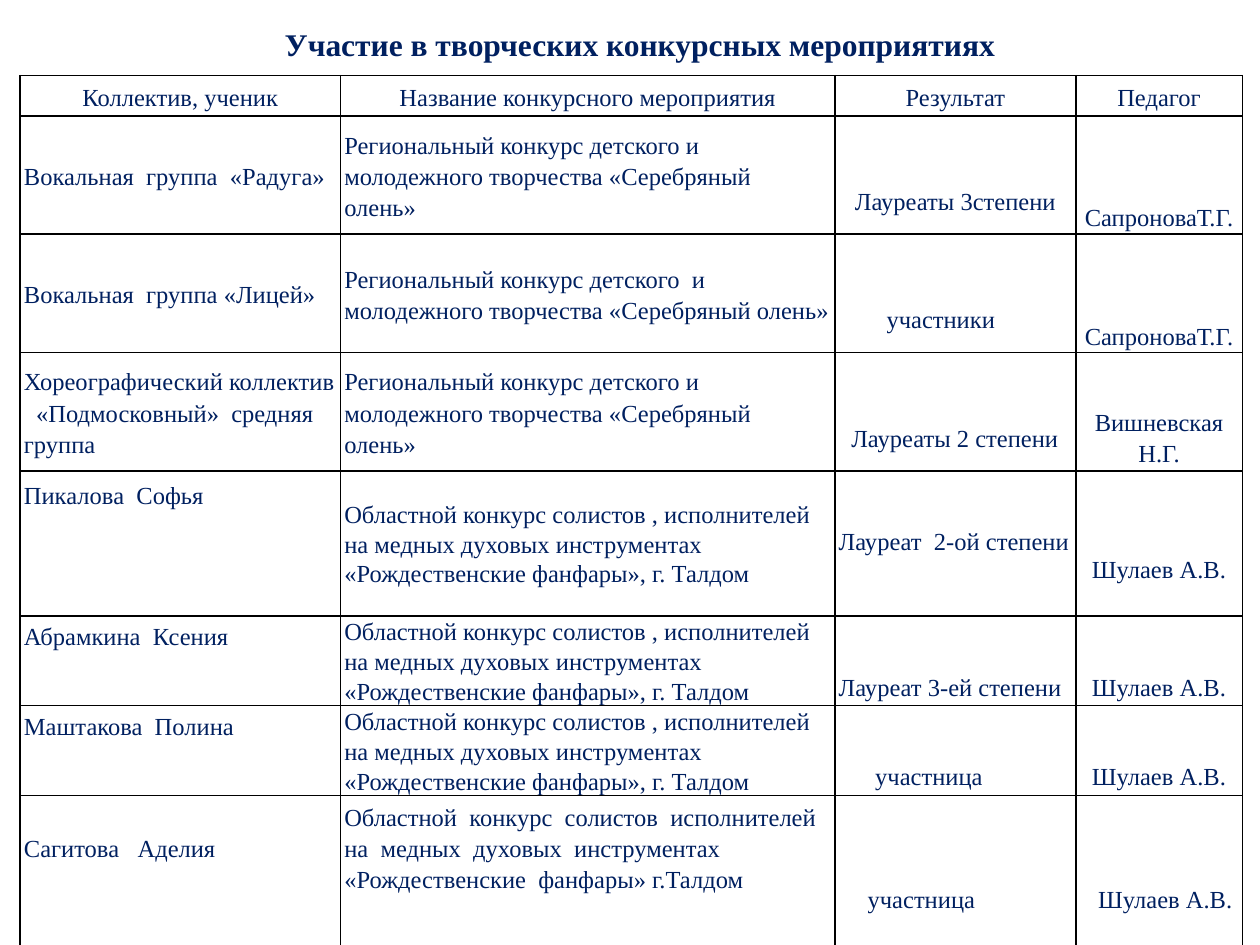
from dataclasses import dataclass

from lxml import etree
from pptx import Presentation
from pptx.dml.color import RGBColor
from pptx.enum.text import MSO_ANCHOR, MSO_AUTO_SIZE, PP_ALIGN
from pptx.oxml.ns import qn
from pptx.util import Inches, Pt

CENTER, LEFT = PP_ALIGN.CENTER, PP_ALIGN.LEFT
MIDDLE, TOP = MSO_ANCHOR.MIDDLE, MSO_ANCHOR.TOP
NO_AUTOFIT = MSO_AUTO_SIZE.NONE
TITLE_ONLY = 5

COLORS = {"text": "002060", "border": "000000"}
FONT = "Times New Roman"
WIDTH, HEIGHT = Inches(10), Inches(7.5)
COLUMN_WEIGHTS = [2.54, 3.92, 1.91, 1.32]
ROW_WEIGHTS = [0.32, 0.94, 0.94, 0.94, 1.15, 0.71, 0.71, 1.23]
SIDE = 0.03
GAP = 0.4

SILVER_DEER = "Региональный конкурс детского и молодежного творчества «Серебряный  олень»"
FANFARES = ("Областной конкурс солистов , исполнителей на медных духовых "
            "инструментах «Рождественские фанфары», г. Талдом")


@dataclass
class Box:
    left: int
    top: int
    width: int
    height: int


@dataclass
class Entry:
    text: str
    align: PP_ALIGN = LEFT
    above: float = 0
    below: float = 0
    indent: float = 0
    spacing: object = 1.15
    after: float = 10


def share_box(left, top, width, height):
    return Box(int(WIDTH * left), int(HEIGHT * top),
               int(WIDTH * width), int(HEIGHT * height))


def header(text):
    return Entry(text, CENTER)


def teacher(name, above=GAP, indent=0):
    return Entry(name, CENTER, above=above, indent=indent)


def fanfares():
    return Entry(FANFARES, spacing=Pt(17.1), after=5.6)


def result(text, indent=0, **options):
    return Entry(text, above=GAP, indent=indent, **options)


ROWS = [
    [header("Коллектив, ученик"), header("Название конкурсного мероприятия"),
     header("Результат"), header("Педагог")],
    [Entry("Вокальная  группа  «Радуга»"), Entry(SILVER_DEER),
     result("Лауреаты 3степени", align=CENTER), teacher("СапроноваТ.Г.", above=0.66)],
    [Entry("Вокальная  группа «Лицей»"),
     Entry("Региональный конкурс детского  и  молодежного творчества «Серебряный олень»"),
     result("участники", 0.38), teacher("СапроноваТ.Г.", above=0.66)],
    [Entry("Хореографический коллектив   «Подмосковный»  средняя группа"),
     Entry(SILVER_DEER), result("Лауреаты 2 степени", 0.1), teacher("Вишневская Н.Г.")],
    [Entry("Пикалова  Софья", below=0.78), fanfares(),
     result("Лауреат  2-ой степени", below=0.45), teacher("Шулаев А.В.")],
    [Entry("Абрамкина  Ксения", below=GAP), fanfares(),
     result("Лауреат 3-ей степени"), teacher("Шулаев А.В.")],
    [Entry("Маштакова  Полина", below=GAP), fanfares(),
     result("участница", 0.29), teacher("Шулаев А.В.")],
    [Entry("Сагитова   Аделия", below=GAP),
     Entry("Областной  конкурс  солистов  исполнителей  на  медных  духовых  "
           "инструментах «Рождественские  фанфары» г.Талдом", below=GAP),
     result("участница", 0.23), teacher("Шулаев А.В.", indent=0.1)],
]


def write_text(frame, text, size=14, bold=False, align=LEFT, spacing=1.0, after=0):
    frame.word_wrap = True
    paragraph = frame.paragraphs[0]
    paragraph.alignment = align
    paragraph.line_spacing = spacing
    paragraph.space_before = Pt(0)
    paragraph.space_after = Pt(after)
    run = paragraph.add_run()
    run.text = text
    run.font.name = FONT
    run.font.size = Pt(size)
    run.font.bold = bold
    run.font.color.rgb = RGBColor.from_string(COLORS["text"])


def add_borders(cell):
    properties = cell._tc.get_or_add_tcPr()
    for side in ("a:lnL", "a:lnR", "a:lnT", "a:lnB"):
        line = etree.SubElement(properties, qn(side), w=str(Pt(1)))
        fill = etree.SubElement(line, qn("a:solidFill"))
        etree.SubElement(fill, qn("a:srgbClr"), val=COLORS["border"])


def fill_cell(cell, entry):
    add_borders(cell)
    cell.fill.background()
    cell.vertical_anchor = MIDDLE
    cell.margin_left = Inches(SIDE + entry.indent)
    cell.margin_right = Inches(SIDE)
    cell.margin_top = Inches(entry.above)
    cell.margin_bottom = Inches(entry.below)
    write_text(cell.text_frame, entry.text, align=entry.align,
               spacing=entry.spacing, after=entry.after)


def place_title(slide, box):
    title = slide.shapes.title
    title.left, title.top, title.width, title.height = box.left, box.top, box.width, box.height
    title.text_frame.auto_size = NO_AUTOFIT
    title.text_frame.vertical_anchor = TOP
    write_text(title.text_frame, "Участие в творческих конкурсных мероприятиях",
               size=18, bold=True, align=CENTER)


def place_results_table(slide, box):
    frame = slide.shapes.add_table(len(ROWS), len(COLUMN_WEIGHTS),
                                   box.left, box.top, box.width, box.height)
    table = frame.table
    table.first_row = False
    table.horz_banding = False
    for column, weight in zip(table.columns, COLUMN_WEIGHTS):
        column.width = int(box.width * weight / sum(COLUMN_WEIGHTS))
    for row, weight, entries in zip(table.rows, ROW_WEIGHTS, ROWS):
        row.height = int(box.height * weight / sum(ROW_WEIGHTS))
        for cell, entry in zip(row.cells, entries):
            fill_cell(cell, entry)


def main():
    presentation = Presentation()
    presentation.slide_width, presentation.slide_height = WIDTH, HEIGHT
    slide = presentation.slides.add_slide(presentation.slide_layouts[TITLE_ONLY])
    place_results_table(slide, share_box(0.016, 0.08, 0.97, 0.925))
    place_title(slide, share_box(0.125, 0.02, 0.766, 0.054))
    presentation.save("out.pptx")


if __name__ == "__main__":
    main()
